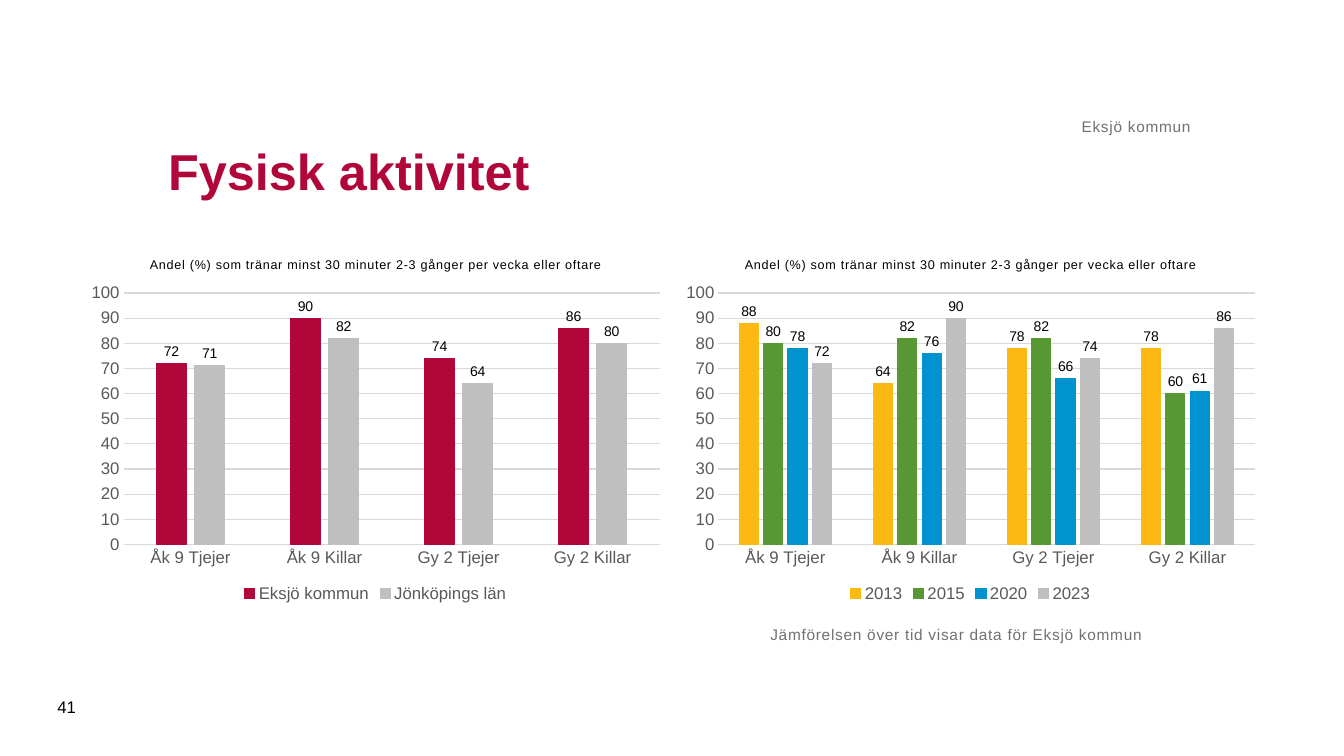
from pptx import Presentation
from pptx.chart.data import CategoryChartData
from pptx.dml.color import RGBColor
from pptx.enum import chart as kinds, text
from pptx.util import Inches, Pt

RED = RGBColor(0xB1, 0x06, 0x3A)
SILVER = RGBColor(0xBF, 0xBF, 0xBF)
YELLOW = RGBColor(0xFD, 0xB9, 0x13)
GREEN = RGBColor(0x57, 0x98, 0x35)
BLUE = RGBColor(0x00, 0x93, 0xD0)
BLACK = RGBColor(0, 0, 0)
GRAY = RGBColor(0x71, 0x71, 0x71)
DARK = RGBColor(0x59, 0x59, 0x59)
RULE = RGBColor(0xD9, 0xD9, 0xD9)

FONT = "Arial"
FORMAT = "#,##0;#,##0"
TITLE = "Andel (%) som tränar minst 30 minuter 2-3 gånger per vecka eller oftare"
GROUPS = ["Åk 9 Tjejer", "Åk 9 Killar", "Gy 2 Tjejer", "Gy 2 Killar"]
TOP, MIDDLE, BOTTOM = (text.MSO_ANCHOR.TOP, text.MSO_ANCHOR.MIDDLE,
                       text.MSO_ANCHOR.BOTTOM)
LEFT, RIGHT = text.PP_ALIGN.LEFT, text.PP_ALIGN.RIGHT


def style(font, size, color, bold=False):
    font.name = FONT
    font.size = Pt(size)
    font.bold = bold
    font.color.rgb = color


def write(para, words, size, color, bold=False, gap=0):
    """Add a run; gap is the letter spacing in hundredths of a point."""
    run = para.add_run()
    run.text = words
    style(run.font, size, color, bold)
    if gap:
        run.font._element.set("spc", str(gap))


prs = Presentation()
prs.slide_width = Inches(13.33)
prs.slide_height = Inches(7.5)
slide = prs.slides.add_slide(prs.slide_layouts[6])

# Charts: left edge, then name, colour and values of each series
charts = [
    (0.79, [("Eksjö kommun", RED, (72, 90, 74, 86)),
            ("Jönköpings län", SILVER, (71, 82, 64, 80))]),
    (6.69, [("2013", YELLOW, (88, 64, 78, 78)),
            ("2015", GREEN, (80, 82, 82, 60)),
            ("2020", BLUE, (78, 76, 66, 61)),
            ("2023", SILVER, (72, 90, 74, 86))]),
]
for left, rows in charts:
    data = CategoryChartData(number_format=FORMAT)
    data.categories = GROUPS
    for name, color, values in rows:
        data.add_series(name, values)
    chart = slide.shapes.add_chart(
        kinds.XL_CHART_TYPE.COLUMN_CLUSTERED, Inches(left), Inches(2.4),
        Inches(5.87), Inches(3.62), data).chart
    style(chart.font, 10, BLACK)

    chart.has_title = True
    write(chart.chart_title.text_frame.paragraphs[0], TITLE, 9, BLACK, gap=50)
    chart.chart_title.include_in_layout = False

    chart.has_legend = True
    chart.legend.position = kinds.XL_LEGEND_POSITION.BOTTOM
    chart.legend.include_in_layout = False
    style(chart.legend.font, 12, DARK)

    for axis in (chart.category_axis, chart.value_axis):
        axis.major_tick_mark = kinds.XL_TICK_MARK.NONE
        axis.minor_tick_mark = kinds.XL_TICK_MARK.NONE
        style(axis.tick_labels.font, 12, DARK)
    scale = chart.value_axis
    scale.minimum_scale, scale.maximum_scale = 0, 100
    scale.major_unit = 10
    scale.tick_labels.number_format = FORMAT
    scale.tick_labels.number_format_is_linked = False
    scale.format.line.fill.background()
    scale.has_major_gridlines = True
    for line in (chart.category_axis.format.line,
                 scale.major_gridlines.format.line):
        line.color.rgb = RULE
        line.width = Pt(0.75)

    plot = chart.plots[0]
    plot.vary_by_categories = False
    plot.gap_width = 219
    plot.overlap = -27
    for series, (name, color, values) in zip(plot.series, rows):
        series.format.fill.solid()
        series.format.fill.fore_color.rgb = color
        series.format.line.color.rgb = color
        series.format.line.width = Pt(0.75)
        labels = series.data_labels
        labels.show_value = True
        labels.position = kinds.XL_LABEL_POSITION.OUTSIDE_END
        labels.number_format = FORMAT
        labels.number_format_is_linked = False
        style(labels.font, 10, BLACK)

# Texts: place, words, size, colour, bold, letter spacing, anchor, align, inset
texts = [
    ((1.57, 0.98, 10.24, 1.42), "Fysisk aktivitet",
     36, RED, True, 0, MIDDLE, LEFT, True),
    ((7.64, 6.2, 5.31, 0.94), "Jämförelsen över tid visar data för Eksjö kommun",
     11, GRAY, False, 50, TOP, LEFT, False),
    ((1.57, 0.62, 10.24, 0.73), "Eksjö kommun",
     11, GRAY, False, 50, BOTTOM, RIGHT, False),
    ((0.47, 6.81, 0.57, 0.4), "41",
     12, BLACK, False, 0, MIDDLE, LEFT, True),
]
for place, words, size, color, bold, gap, anchor, align, inset in texts:
    frame = slide.shapes.add_textbox(*map(Inches, place)).text_frame
    frame.word_wrap = True
    frame.vertical_anchor = anchor
    if not inset:
        frame.margin_left = frame.margin_right = 0
        frame.margin_top = frame.margin_bottom = 0
    para = frame.paragraphs[0]
    para.alignment = align
    write(para, words, size, color, bold, gap)

prs.save("out.pptx")
